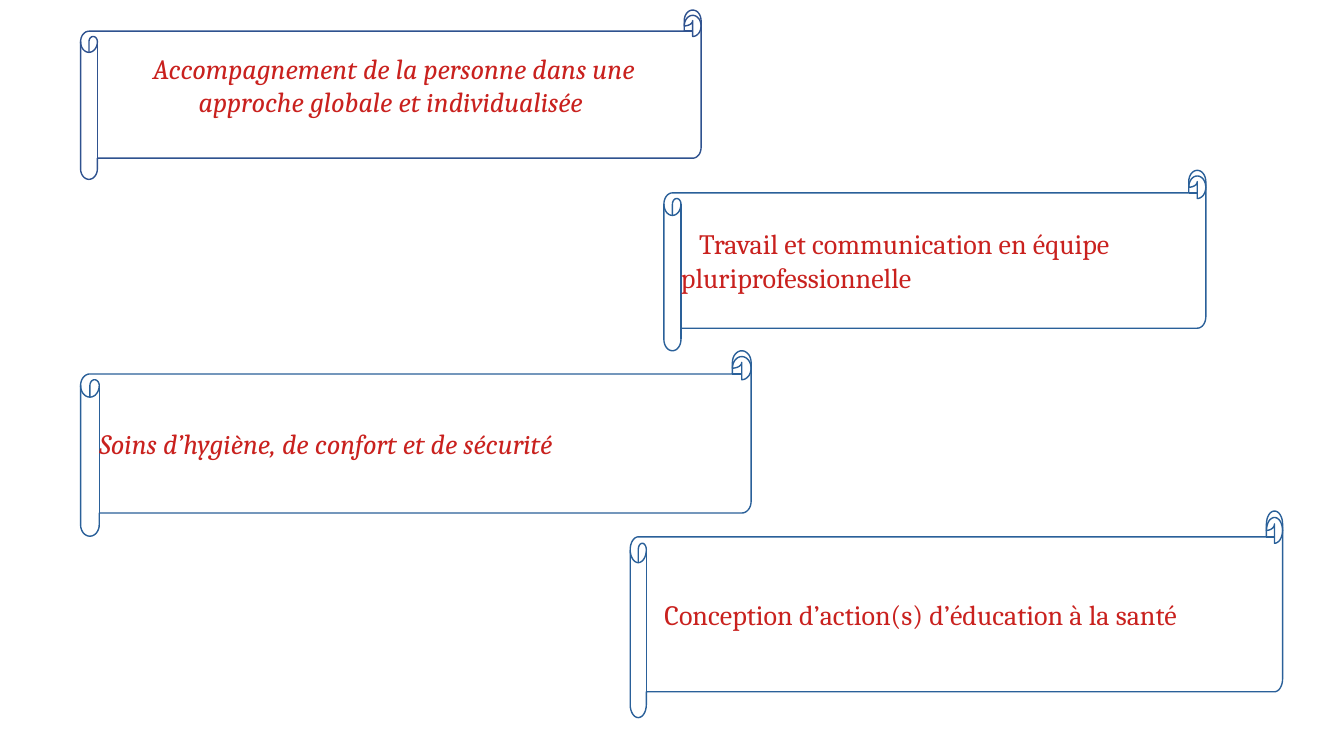
import math
from dataclasses import dataclass

import pptx
import pptx.dml.color
import pptx.enum.text
import pptx.util


@dataclass(frozen=True)
class Theme:
    font: str = "Cambria"
    text_size: float = 20
    line_width: float = 1
    text: str = "C9211E"
    blue: str = "2A6099"
    navy: str = "2F528F"


THEME = Theme()
SLIDE_WIDTH = pptx.util.Inches(13.33)
SLIDE_HEIGHT = pptx.util.Inches(7.5)
CURL_SHARE = 1 / 8
ARC_STEPS = 8
LEFT = pptx.enum.text.PP_ALIGN.LEFT
CENTER = pptx.enum.text.PP_ALIGN.CENTER

# box, curl, indent and lift are percentages of the slide
SCROLLS = [
    dict(text="Conception d’action(s) d’éducation à la santé",
         box=(46.89, 67.6, 48.54, 27.33), curl=1.2, indent=1.35, lift=0,
         italic=False, align=LEFT, line=THEME.blue),
    dict(text="Travail et communication en équipe pluriprofessionnelle",
         box=(49.4, 22.53, 40.32, 23.87), curl=1.27, indent=1.35, lift=0,
         italic=False, align=LEFT, line=THEME.blue),
    dict(text="Soins d’hygiène, de confort et de sécurité",
         box=(6, 46.4, 49.89, 24.53), curl=1.39, indent=0, lift=0,
         italic=True, align=LEFT, line=THEME.blue),
    dict(text="Accompagnement de la personne dans une approche globale et individualisée",
         box=(6, 1.33, 46.17, 22.4), curl=1.25, indent=0.45, lift=2.67,
         italic=True, align=CENTER, line=THEME.navy),
]


def color(value):
    return pptx.dml.color.RGBColor.from_string(value)


def across(percent):
    return round(SLIDE_WIDTH * percent / 100)


def down(percent):
    return round(SLIDE_HEIGHT * percent / 100)


def arc(center_x, center_y, radius_x, radius_y, start, end):
    steps = math.ceil(abs(end - start) / 90 * ARC_STEPS)
    angles = [math.radians(start + (end - start) * step / steps) for step in range(steps + 1)]
    return [(center_x + radius_x * math.cos(angle), center_y + radius_y * math.sin(angle))
            for angle in angles]


def scroll_contours(width, height, a, b):
    outline = [
        *arc(a, 3 * b, a, b, 180, 270),
        (width - 2 * a, 2 * b),
        *arc(width - a, b, a, b, 180, 360),
        *arc(width - a, height - 3 * b, a, b, 0, 90),
        (2 * a, height - 2 * b),
        *arc(a, height - b, a, b, 0, 180),
    ]
    left_curl = [
        *arc(1.5 * a, 3 * b, a / 2, b / 2, 180, 360),
        *arc(a, 3 * b, a, b, 0, 90),
    ]
    right_curl = [
        *arc(width - 2 * a, b, a, b / 2, 0, 90),
        *arc(width - a, 1.5 * b, a, b, 180, 450),
    ]
    left_edge = arc(a, 3 * b, a, b, 90, 180)
    right_edge = [(width - a, 2 * b), (width - 2 * a, 2 * b)]
    roll_side = [(2 * a, 3 * b), (2 * a, height - b)]
    return [(outline, True), (left_curl, True), (right_curl, True),
            (left_edge, False), (right_edge, False), (roll_side, False)]


def add_scroll(slide, scroll):
    left, top, width, height = scroll["box"]
    left, top, width, height = across(left), down(top), across(width), down(height)
    curl_width, curl_height = across(scroll["curl"]), round(height * CURL_SHARE)

    builder = slide.shapes.build_freeform()
    for points, closed in scroll_contours(width, height, curl_width / 2, curl_height / 2):
        builder.move_to(*points[0])
        builder.add_line_segments(points[1:], close=closed)
    shape = builder.convert_to_shape(left, top)
    shape.shadow.inherit = False
    shape.fill.background()
    shape.line.color.rgb = color(scroll["line"])
    shape.line.width = pptx.util.Pt(THEME.line_width)

    frame = shape.text_frame
    frame.word_wrap = True
    frame.vertical_anchor = pptx.enum.text.MSO_ANCHOR.MIDDLE
    frame.margin_left = frame.margin_right = curl_width
    frame.margin_top = curl_height
    frame.margin_bottom = curl_height + down(scroll["lift"])

    paragraph = frame.paragraphs[0]
    paragraph.text = scroll["text"]
    paragraph.alignment = scroll["align"]
    paragraph.font.name = THEME.font
    paragraph.font.size = pptx.util.Pt(THEME.text_size)
    paragraph.font.italic = scroll["italic"]
    paragraph.font.color.rgb = color(THEME.text)
    paragraph._p.get_or_add_pPr().set("indent", str(across(scroll["indent"])))


def main():
    presentation = pptx.Presentation()
    presentation.slide_width = SLIDE_WIDTH
    presentation.slide_height = SLIDE_HEIGHT
    slide = presentation.slides.add_slide(presentation.slide_layouts[6])
    for scroll in SCROLLS:
        add_scroll(slide, scroll)
    presentation.save("out.pptx")


if __name__ == "__main__":
    main()
